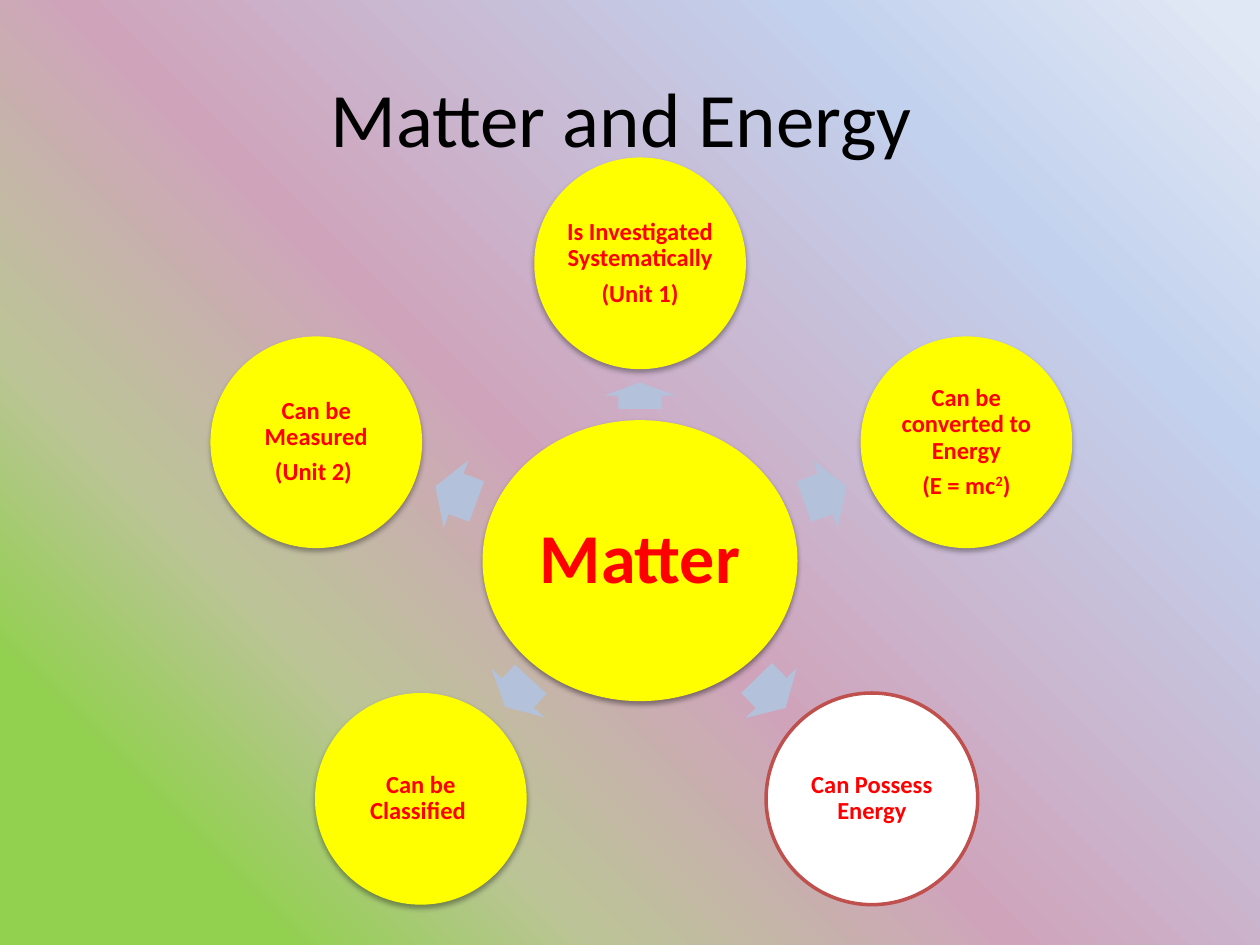
from lxml.etree import SubElement
from pptx import Presentation
from pptx.dml.color import RGBColor
from pptx.enum.shapes import MSO_SHAPE as SHAPE
from pptx.enum.text import MSO_ANCHOR as ANCHOR, PP_ALIGN as ALIGN
from pptx.oxml.ns import qn
from pptx.util import Inches, Pt

COLORS = {
    "title": "000000", "text": "FF0000", "circle": "FFFF00",
    "highlight": "FFFFFF", "outline": "C0504D", "arrow": "B3C1DB", "shadow": "000000",
}
BACKGROUND = [(13, "92D050"), (27, "BCC497"), (46, "CFA4BB"), (79, "C2D1ED"), (98, "E1E8F5")]
CIRCLE = 1.68
ARROW_SPAN = 0.57

# Circle centre, paragraphs of (text, baseline) runs, highlighted or not
TOPICS = [
    (5.08, 2.09, [[("Is Investigated Systematically ", 0)], [("(Unit 1)", 0)]], False),
    (7.67, 3.51, [[("Can be converted to Energy", 0)],
                  [("(E = mc", 0), ("2", 30), (")", 0)]], False),
    (6.92, 6.34, [[("Can Possess Energy", 0)]], True),
    (3.34, 6.34, [[("Can be Classified ", 0)]], False),
    (2.51, 3.51, [[("Can be Measured", 0)], [("(Unit 2) ", 0)]], False),
]

# Arrow centre, length, rotation
ARROWS = [
    (5.08, 3.14, 0.21, 270),
    (6.55, 3.92, 0.36, 340),
    (6.12, 5.5, 0.33, 45.8),
    (4.11, 5.5, 0.3, 132.6),
    (3.62, 3.92, 0.35, 200.1),
]


class Diagram:
    font = "Calibri"

    def __init__(self, slide):
        self.slide = slide

    def background(self, stops):
        fill = self.slide.background.fill
        fill.gradient()
        fill.gradient_angle = 45
        gs_list = self.slide._element.xpath(".//p:bg//a:gsLst")[0]
        for old in list(gs_list):
            gs_list.remove(old)
        for pos, color in stops:
            gs = SubElement(gs_list, qn("a:gs"), pos=str(pos * 1000))
            SubElement(gs, qn("a:srgbClr"), val=color)

    def style(self, r, size, color, bold=False):
        r.font.name = self.font
        r.font.size = Pt(size)
        r.font.bold = bold
        r.font.color.rgb = RGBColor.from_string(COLORS[color])

    def title(self, text):
        s = self.slide.shapes.title
        s.left, s.top, s.width, s.height = (Inches(v) for v in (0.5, 0.3, 9, 1.25))
        tf = s.text_frame
        tf.text = text
        tf.vertical_anchor = ANCHOR.MIDDLE
        p = tf.paragraphs[0]
        p.alignment = ALIGN.CENTER
        self.style(p.runs[0], 44, "title")

    def shape(self, kind, x, y, width, height, color):
        """Add a filled shape centred on x, y."""
        s = self.slide.shapes.add_shape(
            kind, Inches(x - width / 2), Inches(y - height / 2), Inches(width), Inches(height))
        s.shadow.inherit = False
        s.fill.solid()
        s.fill.fore_color.rgb = RGBColor.from_string(COLORS[color])
        s.line.fill.background()
        return s

    def drop_shadow(self, s, alpha, distance):
        effects = s._element.spPr.find(qn("a:effectLst"))
        shadow = SubElement(effects, qn("a:outerShdw"), blurRad=str(Pt(3.1)),
                            dist=str(Pt(distance)), dir="5400000", rotWithShape="0")
        color = SubElement(shadow, qn("a:srgbClr"), val=COLORS["shadow"])
        SubElement(color, qn("a:alpha"), val=str(alpha * 1000))

    def circle(self, x, y, width, height, paragraphs, size, margin,
               highlight=False, shadow=(35, 1.8)):
        s = self.shape(SHAPE.OVAL, x, y, width, height, "highlight" if highlight else "circle")
        if highlight:
            s.line.color.rgb = RGBColor.from_string(COLORS["outline"])
            s.line.width = Pt(2)
        else:
            self.drop_shadow(s, *shadow)
        tf = s.text_frame
        tf.word_wrap = True
        tf.vertical_anchor = ANCHOR.MIDDLE
        tf.margin_left = tf.margin_right = tf.margin_top = tf.margin_bottom = Inches(margin)
        for i, runs in enumerate(paragraphs):
            p = tf.add_paragraph() if i else tf.paragraphs[0]
            p.alignment = ALIGN.CENTER
            p.line_spacing = 0.9
            p.space_after = Pt(size * 0.35)
            for text, baseline in runs:
                r = p.add_run()
                r.text = text
                self.style(r, size, "text", bold=True)
                if baseline:
                    r._r.get_or_add_rPr().set("baseline", str(baseline * 1000))

    def arrow(self, x, y, length, rotation):
        s = self.shape(SHAPE.RIGHT_ARROW, x, y, length, ARROW_SPAN, "arrow")
        s.adjustments[0], s.adjustments[1] = 0.6, 0.5
        s.rotation = rotation


def main():
    prs = Presentation()
    prs.slide_width, prs.slide_height = Inches(10), Inches(7.5)
    diagram = Diagram(prs.slides.add_slide(prs.slide_layouts[5]))

    # Background and title
    diagram.background(BACKGROUND)
    diagram.title("Matter and Energy ")

    # Central circle
    diagram.circle(5.08, 4.45, 2.5, 2.23, [[("Matter", 0)]], 40, 0.06, shadow=(38, 1.6))

    # Arrows and the topics around the centre
    for arrow, (x, y, paragraphs, highlight) in zip(ARROWS, TOPICS):
        diagram.arrow(*arrow)
        diagram.circle(x, y, CIRCLE, CIRCLE, paragraphs, 14, 0.01, highlight)

    prs.save("out.pptx")


if __name__ == "__main__":
    main()
